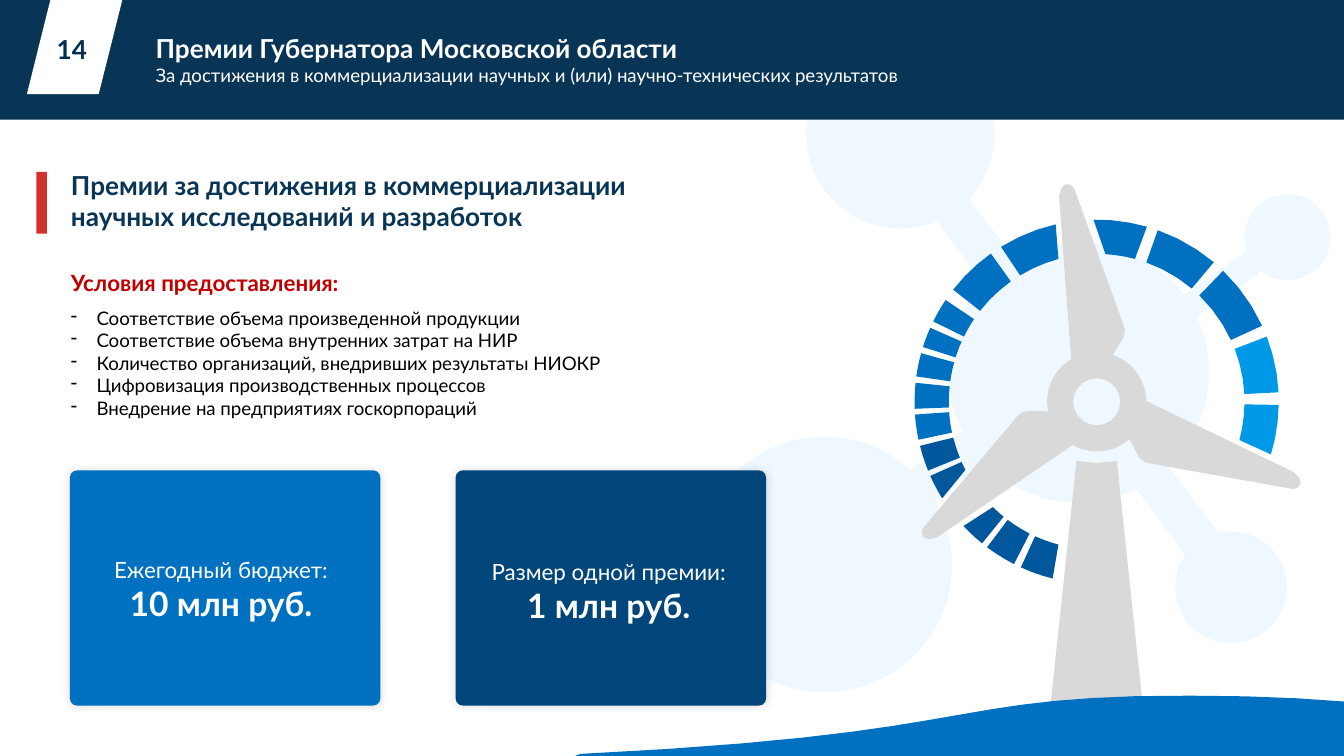
import math
from lxml import etree
from pptx import Presentation
from pptx.dml.color import RGBColor
from pptx.enum.shapes import MSO_SHAPE
from pptx.enum.text import MSO_AUTO_SIZE, PP_ALIGN
from pptx.oxml.ns import qn
from pptx.util import Inches, Pt

RECT, ROUND = MSO_SHAPE.RECTANGLE, MSO_SHAPE.ROUNDED_RECTANGLE
OVAL, SLANTED = MSO_SHAPE.OVAL, MSO_SHAPE.PARALLELOGRAM
LEFT, CENTER = PP_ALIGN.LEFT, PP_ALIGN.CENTER
GROW = MSO_AUTO_SIZE.SHAPE_TO_FIT_TEXT

COLS, ROWS = 100, 56.25
CELL = Inches(10) // COLS
FONT = "Lato"
NAVY, WHITE, BLUE, DARK, SKY = "083455", "FFFFFF", "0070C0", "01579B", "0099E8"
PALE, GREY, RED = "EFF8FF", "D9D9D9", "C00000"


def rgb(value):
    return RGBColor.from_string(value)


def grid(*cells):
    return [round(c * CELL) for c in cells]


def paint(sp, color):
    sp.fill.solid()
    sp.fill.fore_color.rgb = rgb(color)
    sp.line.fill.background()
    sp.shadow.inherit = False
    return sp


def add_shape(slide, kind, box, color):
    return paint(slide.shapes.add_shape(kind, *grid(*box)), color)


def add_outline(slide, box, contours, color):
    x, y = box[:2]
    builder = None
    for contour in contours:
        points = [grid(x + px, y + py) for px, py in contour]
        if builder is None:
            builder = slide.shapes.build_freeform(*points[0], scale=1.0)
        else:
            builder.move_to(*points[0])
        builder.add_line_segments(points[1:], close=True)
    return paint(builder.convert_to_shape(), color)


def add_text(slide, box, lines, wrap=True):
    tf = slide.shapes.add_textbox(*grid(*box)).text_frame
    tf.word_wrap = wrap
    tf.auto_size = GROW
    for i, (text, size, color, bold, align) in enumerate(lines):
        p = tf.paragraphs[0] if i == 0 else tf.add_paragraph()
        p.alignment = align
        r = p.add_run()
        r.text = text
        r.font.name, r.font.size, r.font.bold = FONT, Pt(size), bold
        r.font.color.rgb = rgb(color)
    return tf


def add_bullet(p):
    pPr = p._p.get_or_add_pPr()
    pPr.set("marL", str(Inches(0.19)))
    pPr.set("indent", str(-Inches(0.19)))
    etree.SubElement(pPr, qn("a:buChar")).set("char", "-")


def add_glow(sp):
    effects = sp._element.spPr.find(qn("a:effectLst"))
    shadow = etree.SubElement(effects, qn("a:outerShdw"), blurRad=str(Pt(5)), dist="0", dir="0")
    color = etree.SubElement(shadow, qn("a:srgbClr"), val="000000")
    etree.SubElement(color, qn("a:alpha"), val="15000")


def curve(a, b, c, d, steps):
    weights = [((1 - t) ** 3, 3 * t * (1 - t) ** 2, 3 * t * t * (1 - t), t ** 3)
               for t in (i / steps for i in range(steps + 1))]
    return [tuple(sum(w * p[k] for w, p in zip(ws, (a, b, c, d))) for k in (0, 1))
            for ws in weights]


def arc(center, radius, start, end, steps=3):
    angles = [math.radians(start + (end - start) * i / steps) for i in range(steps + 1)]
    return [(center[0] + radius * math.sin(a), center[1] - radius * math.cos(a)) for a in angles]


def turn(points, center, degrees):
    c, s = math.cos(math.radians(degrees)), math.sin(math.radians(degrees))
    return [(center[0] + x * c - y * s, center[1] + x * s + y * c) for x, y in points]


def molecule(slide, box):
    x, y = box[:2]
    rods = [
        [(27.3, 20.9), (24.8, 22.6), (17.1, 12.3), (19.4, 10.6)],
        [(33, 28.8), (30.7, 30.5), (38.3, 40.8), (40.6, 38.9)],
        [(33.6, 24.7), (32.6, 23), (43.1, 15.8), (44.1, 17.3)],
        [(25.9, 29.9), (24.2, 27.4), (13.9, 35.1), (15.6, 37.3)],
    ]
    atoms = [(29.25, 25.7, 9.7), (16, 8, 7), (10.35, 40, 9.5), (44.8, 15.65, 3.2), (40.6, 41.7, 4.15)]
    for rod in rods:
        add_outline(slide, box, [rod], PALE)
    for cx, cy, r in atoms:
        add_shape(slide, OVAL, (x + cx - r, y + cy - r, 2 * r, 2 * r), PALE)


def header(slide, box):
    x, y, w, h = box
    add_shape(slide, RECT, box, NAVY)
    add_shape(slide, SLANTED, (x + 2, y, 7.1, 7), WHITE)
    add_text(slide, (x + 10.6, y + 1.9, w - 10.6, 5), [
        ("Премии Губернатора Московской области", 14, WHITE, True, LEFT),
        ("За достижения в коммерциализации научных и (или) научно-технических результатов",
         10, WHITE, False, LEFT)])
    add_text(slide, (x + 2.6, y + 2, 5.5, 3.4), [("14", 14, "002D50", True, CENTER)])


def conditions(slide, box):
    x, y, w, h = box
    add_shape(slide, RECT, (x, y + 0.7, 0.8, 4.6), "D42E2D")
    add_text(slide, (x + 1.6, y, w - 1.6, 5.7), [
        (text, 14, NAVY, True, LEFT) for text in (
            "Премии за достижения в коммерциализации", "научных исследований и разработок")])
    items = ["Соответствие объема произведенной продукции",
             "Соответствие объема внутренних затрат на НИР",
             "Количество организаций, внедривших результаты НИОКР",
             "Цифровизация производственных процессов",
             "Внедрение на предприятиях госкорпораций"]
    tf = add_text(slide, (x + 1.6, y + 7.4, w - 1.6, h - 7.4), [
        ("Условия предоставления:", 12, RED, True, LEFT)]
        + [(item, 10, "000000", False, LEFT) for item in items])
    tf.paragraphs[1].space_before = Pt(6)
    for p in tf.paragraphs[1:]:
        add_bullet(p)


def card(slide, box, color, label, amount, text_box):
    x, y = box[:2]
    sp = add_shape(slide, ROUND, box, color)
    sp.adjustments[0] = 0.03
    add_glow(sp)
    dx, dy, w, h = text_box
    add_text(slide, (x + dx, y + dy, w, h), [
        (label, 12, WHITE, False, LEFT), (amount, 18, WHITE, True, CENTER)], wrap=False)


def turbine(slide, box):
    hub = (13.6, 16.5)
    tower = [(12.1, 20.9), (13.6, 21.05), (15.1, 20.9), (17.1, 39.7), (10.1, 39.7)]
    add_outline(slide, box, [tower], GREY)

    blade = ([(-1.9, -3.2)]
             + curve((-2.8, -15.3), (-2.7, -16.5), (-1.7, -16.5), (-1.5, -15.4), 5)
             + [(2, -5.7), (2.1, -5.3), (2, -4.8), (1.2, -3.5)])
    rotor = []
    for angle in (0, 120, 240):
        rotor += turn(blade, hub, angle) + arc(hub, 3.7, angle + 19, angle + 89, 6)
    add_outline(slide, box, [rotor, arc(hub, 1.75, 360, 0, 20)], GREY)

    segments = [
        (BLUE, -1, 16, 3.4, 15), (BLUE, 19.6, 40), (BLUE, 44, 65.3),
        (SKY, 69, 87), (SKY, 91, 106.8, 91, 105),
        (DARK, 194, 204.6, 195, 204.6), (DARK, 207, 217), (DARK, 219, 227, 219, 224.6),
        (DARK, 238, 246, 242.6, 246), (DARK, 247.8, 256), (BLUE, 258, 266),
        (BLUE, 267.8, 276), (BLUE, 278, 285.5), (BLUE, 287.5, 294), (BLUE, 296.2, 304),
        (BLUE, 308, 324.5), (BLUE, 328.3, 347, 328.8, 345),
    ]
    for color, start, end, *inner in segments:
        inner_start, inner_end = inner or (start, end)
        outline = arc(hub, 13.55, start, end) + arc(hub, 11, inner_end, inner_start)
        add_outline(slide, box, [outline], color)


def hill(slide, box):
    w, h = box[2:]
    ridge = (curve((w, 0.5), (52.6, 0.1), (47.3, 0), (41.7, 0.1), 4)
             + curve((41.7, 0.1), (27.3, 0.5), (28.9, 3), (0.4, 4.4), 12))
    add_outline(slide, box, [ridge + [(0, h), (w, h)]], BLUE)


def main():
    prs = Presentation()
    prs.slide_width, prs.slide_height = grid(COLS, ROWS)
    slide = prs.slides.add_slide(prs.slide_layouts[6])
    molecule(slide, (51, 2, 48, 51))
    cards = [
        (BLUE, "Ежегодный бюджет:", "10 млн руб.", (2.3, 5.9, 18.9, 6.1)),
        ("00467A", "Размер одной премии:", "1 млн руб.", (1.7, 6, 21, 6.1)),
    ]
    for i, content in enumerate(cards):
        card(slide, (5.2 + 28.7 * i, 35, 23.1, 17.5), *content)
    header(slide, (0, 0, COLS, 8.9))
    conditions(slide, (2.7, 12.1, 84.3, 19.7))
    turbine(slide, (68, 13.4, 29.2, 39.7))
    hill(slide, (42.8, 51.7, 57.2, 4.55))
    prs.save("out.pptx")


if __name__ == "__main__":
    main()
